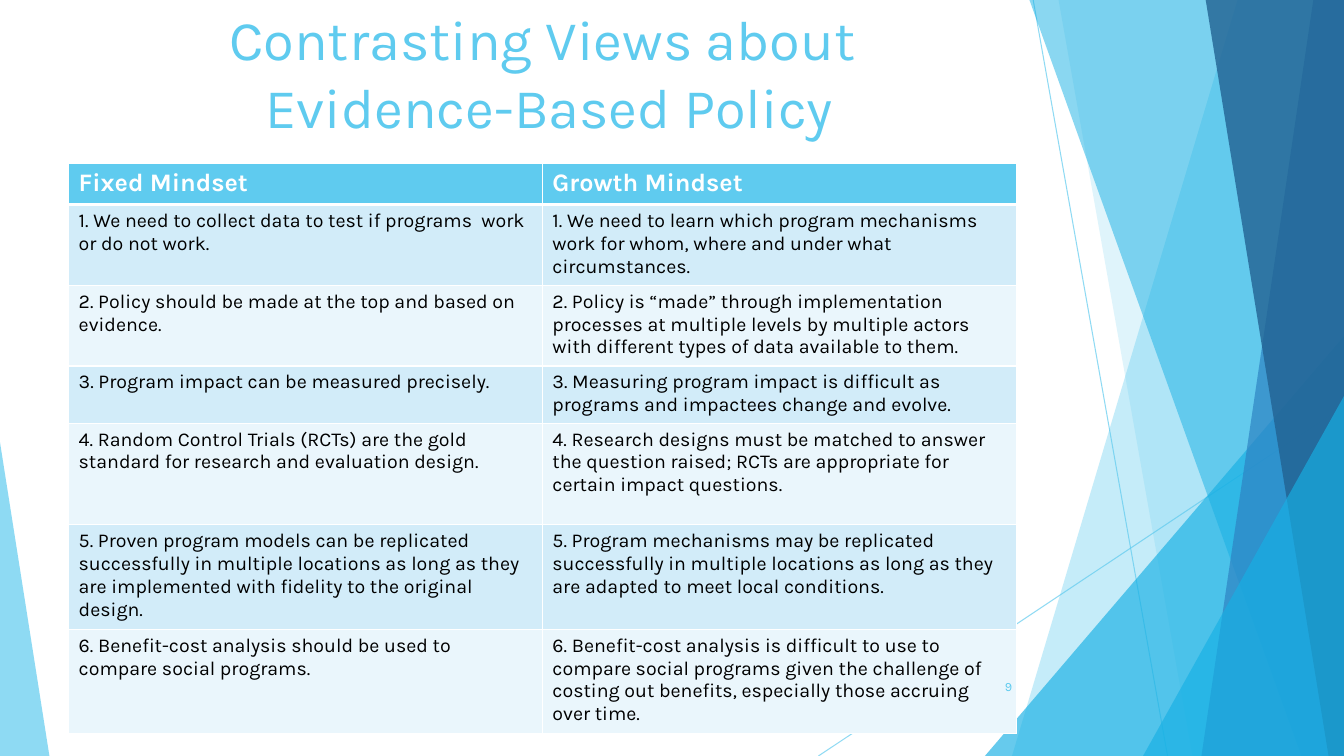
from lxml import etree
from pptx import Presentation
from pptx.dml.color import RGBColor
from pptx.enum.shapes import MSO_CONNECTOR, MSO_SHAPE
from pptx.enum.text import MSO_ANCHOR, PP_ALIGN
from pptx.oxml.ns import qn
from pptx.util import Pt

LINE = MSO_CONNECTOR.STRAIGHT
TRIANGLE = MSO_SHAPE.ISOSCELES_TRIANGLE
TOP, MIDDLE = MSO_ANCHOR.TOP, MSO_ANCHOR.MIDDLE
LEFT, CENTER, RIGHT = PP_ALIGN.LEFT, PP_ALIGN.CENTER, PP_ALIGN.RIGHT

SKY = RGBColor(0x5F, 0xCB, 0xEF)
CYAN = RGBColor(0x17, 0xB0, 0xE4)
BLUE = RGBColor(0x2E, 0x83, 0xC3)
NAVY = RGBColor(0x22, 0x62, 0x92)
WHITE = RGBColor(0xFF, 0xFF, 0xFF)
BLACK = RGBColor(0, 0, 0)
BANDS = RGBColor(0xD2, 0xEC, 0xF9), RGBColor(0xEA, 0xF6, 0xFC)

WIDTH, HEIGHT = 960, 540
BLEED = -0.7
ROW_HEIGHTS = [29.5, 56, 56, 39.5, 72.7, 72.7, 72.6]
MINDSETS = [
    ("Fixed Mindset", "Growth Mindset"),
    ("1. We need to collect data to test if programs  work or do not work.",
     "1. We need to learn which program mechanisms work for whom, where and "
     "under what circumstances."),
    ("2. Policy should be made at the top and based on evidence.",
     "2. Policy is “made” through implementation processes at multiple levels "
     "by multiple actors with different types of data available to them."),
    ("3. Program impact can be measured precisely.",
     "3. Measuring program impact is difficult as programs and impactees "
     "change and evolve."),
    ("4. Random Control Trials (RCTs) are the gold standard for research and "
     "evaluation design.",
     "4. Research designs must be matched to answer the question raised; RCTs "
     "are appropriate for certain impact questions."),
    ("5. Proven program models can be replicated successfully in multiple "
     "locations as long as they are implemented with fidelity to the original "
     "design.",
     "5. Program mechanisms may be replicated successfully in multiple "
     "locations as long as they are adapted to meet local conditions."),
    ("6. Benefit-cost analysis should be used to compare social programs.",
     "6. Benefit-cost analysis is difficult to use to compare social programs "
     "given the challenge of costing out benefits, especially those accruing  "
     "over time."),
]


class SlideBuilder:
    """Draw styled elements on one slide, with lengths in points."""

    font = "Karla"

    def __init__(self, slide):
        self.shapes = slide.shapes

    def set_alpha(self, sp, percent):
        color = next(sp._element.spPr.iter(qn("a:srgbClr")))
        etree.SubElement(color, qn("a:alpha"), val=str(percent * 1000))

    def paint(self, sp, color, alpha):
        sp.shadow.inherit = False
        sp.fill.solid()
        sp.fill.fore_color.rgb = color
        sp.line.fill.background()
        self.set_alpha(sp, alpha)

    def line(self, x1, y1, x2, y2):
        sp = self.shapes.add_connector(LINE, Pt(x1), Pt(y1), Pt(x2), Pt(y2))
        sp.line.color.rgb = SKY
        sp.line.width = Pt(0.75)
        self.set_alpha(sp, 70)
        etree.SubElement(sp._element.spPr, qn("a:effectLst"))

    def facet(self, top_x, bottom_x, color, alpha):
        builder = self.shapes.build_freeform(Pt(top_x), Pt(BLEED))
        corners = [(WIDTH, BLEED), (WIDTH, HEIGHT), (bottom_x, HEIGHT)]
        builder.add_line_segments([(Pt(x), Pt(y)) for x, y in corners])
        self.paint(builder.convert_to_shape(), color, alpha)

    def triangle(self, x, y, width, apex, color, alpha):
        sp = self.shapes.add_shape(TRIANGLE, Pt(x), Pt(y), Pt(width), Pt(HEIGHT - y))
        sp.adjustments[0] = apex
        self.paint(sp, color, alpha)

    def set_text(self, tf, text, size, color, align=LEFT, bold=False):
        p = tf.paragraphs[0]
        p.text = text
        p.alignment = align
        for r in p.runs:
            r.font.name = self.font
            r.font.size = Pt(size)
            r.font.bold = bold
            r.font.color.rgb = color

    def text(self, x, y, width, height, text, size, align, anchor):
        tf = self.shapes.add_textbox(Pt(x), Pt(y), Pt(width), Pt(height)).text_frame
        tf.word_wrap = True
        tf.vertical_anchor = anchor
        self.set_text(tf, text, size, SKY, align)

    def borders(self, cell, top, bottom):
        tc_pr = cell._tc.get_or_add_tcPr()
        sides = {"a:lnL": 1, "a:lnR": 1, "a:lnT": top, "a:lnB": bottom}
        for i, (tag, width) in enumerate(sides.items()):
            ln = etree.Element(qn(tag), w=str(Pt(width)))
            fill = etree.SubElement(ln, qn("a:solidFill"))
            etree.SubElement(fill, qn("a:srgbClr"), val=str(WHITE))
            tc_pr.insert(i, ln)

    def table(self, x, y, width, rows, heights):
        frame = self.shapes.add_table(
            len(rows), len(rows[0]), Pt(x), Pt(y), Pt(width), Pt(sum(heights)))
        table = frame.table
        for i, (texts, height) in enumerate(zip(rows, heights)):
            header = i == 0
            table.rows[i].height = Pt(height)
            for j, text in enumerate(texts):
                cell = table.cell(i, j)
                cell.fill.solid()
                cell.fill.fore_color.rgb = SKY if header else BANDS[(i - 1) % 2]
                self.borders(cell, 3 if i == 1 else 1, 3 if header else 1)
                self.set_text(cell.text_frame, text, 18 if header else 14,
                              WHITE if header else BLACK, bold=header)


def main():
    prs = Presentation()
    prs.slide_width, prs.slide_height = Pt(WIDTH), Pt(HEIGHT)
    s = SlideBuilder(prs.slides.add_slide(prs.slide_layouts[6]))

    s.line(738, 0, 834, HEIGHT)
    s.line(WIDTH, 290, 584.6, HEIGHT)
    s.facet(884.2, 722.9, SKY, 36)
    s.facet(756, 851.8, SKY, 20)
    s.triangle(703.5, 240, 256.5, 1, CYAN, 66)
    s.facet(735.1, 929.5, CYAN, 50)
    s.facet(938.2, 858.2, BLUE, 70)
    s.facet(861.1, 949, NAVY, 80)
    s.triangle(816.5, 283, 143.5, 1, CYAN, 66)
    s.triangle(0, 316, 35.3, 0, SKY, 70)

    s.text(49, 0, 676.8, 103.7, "Contrasting Views about\n Evidence-Based Policy",
           40, CENTER, TOP)
    s.table(49, 116.6, 676.8, MINDSETS, ROW_HEIGHTS)
    s.text(676, 476, 54, 28.8, "9", 9, RIGHT, MIDDLE)
    prs.save("out.pptx")


if __name__ == "__main__":
    main()
